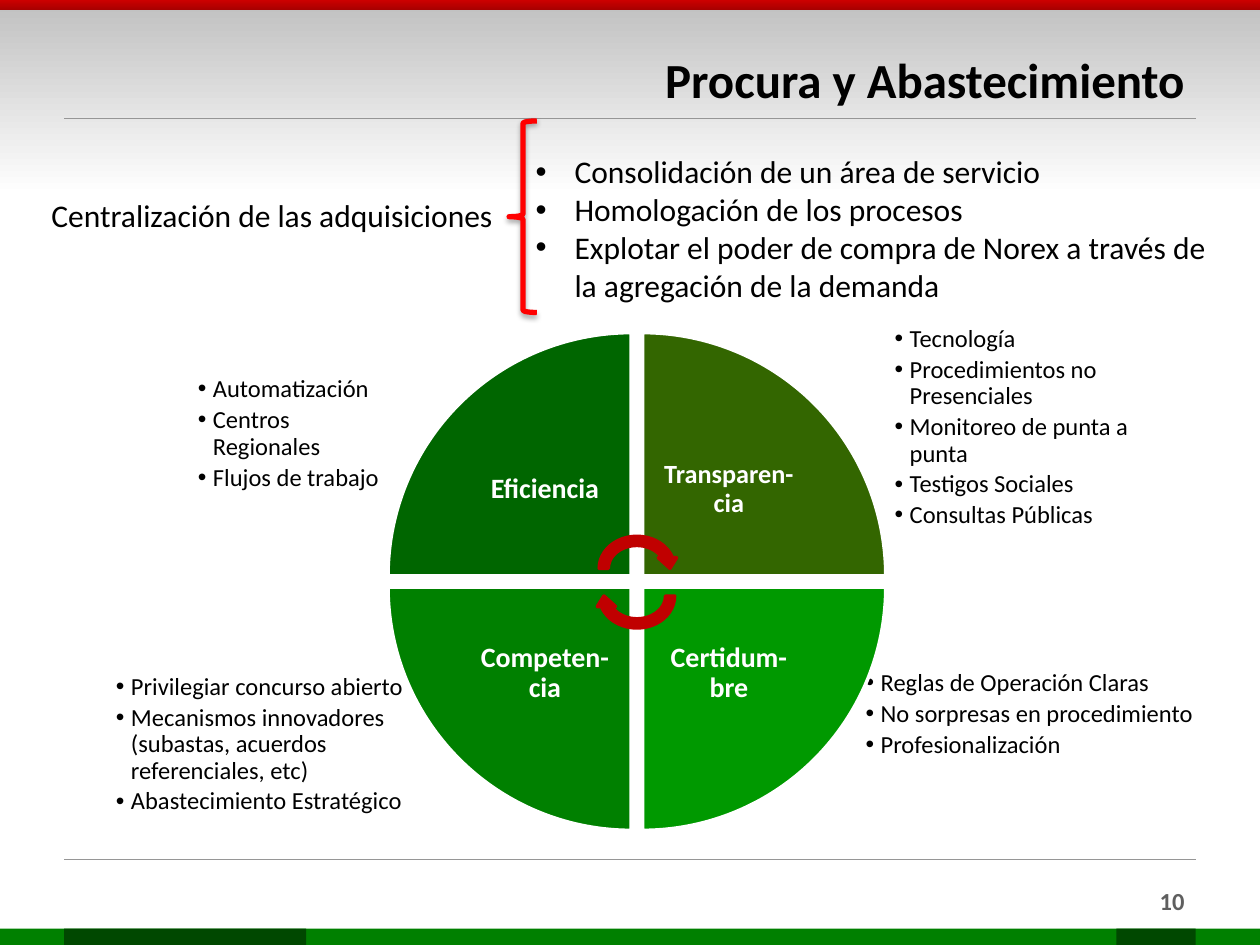
import pptx
import pptx.dml.color
import pptx.enum.shapes
import pptx.enum.text
import pptx.oxml
import pptx.oxml.ns
import pptx.util
from dataclasses import dataclass

Inches, Pt = pptx.util.Inches, pptx.util.Pt
SHAPE = pptx.enum.shapes.MSO_SHAPE
ALIGN = pptx.enum.text.PP_ALIGN
ANCHOR = pptx.enum.text.MSO_ANCHOR


@dataclass(frozen=True)
class Theme:
    """Colours, font and type sizes of the slide."""
    font: str = "Calibri"
    text: str = "000000"
    light: str = "FFFFFF"
    number: str = "5F5F5F"
    rule: str = "969696"
    header: tuple = ("C0C0C0", "FFFFFF")
    ribbon: tuple = ("CC0000", "A80000")
    footer: str = "008000"
    footer_dark: str = "004800"
    brace: str = "FF0000"
    arrow: str = "C00000"
    title_size: int = 28
    body_size: int = 18
    label_size: int = 16
    list_size: int = 14


def rgb(value):
    """Return a colour from its hex form."""
    return pptx.dml.color.RGBColor.from_string(value)


def element(xml):
    """Parse a DrawingML element."""
    return pptx.oxml.parse_xml(xml.replace(" ", f" {pptx.oxml.ns.nsdecls('a')} ", 1))


def box(at):
    """Turn left, top, width and height into lengths."""
    return [Inches(v) for v in at]


def write(sp, text, *, font, size, color, bold=False, align=ALIGN.LEFT, anchor=ANCHOR.TOP,
          inset=None, wrap=True, indent=0, spacing=1.0, after=0):
    """Fill a shape with one paragraph per line of text."""
    tf = sp.text_frame
    tf.auto_size = pptx.enum.text.MSO_AUTO_SIZE.NONE
    tf.word_wrap, tf.vertical_anchor = wrap, anchor
    if inset is not None:
        tf.margin_left = tf.margin_top = tf.margin_right = tf.margin_bottom = Inches(inset)
    for i, line in enumerate(text.split("\n")):
        p = tf.add_paragraph() if i else tf.paragraphs[0]
        if indent:
            pPr = p._p.get_or_add_pPr()
            pPr.set("marL", str(Inches(indent)))
            pPr.set("indent", str(-Inches(indent)))
            pPr.append(element('<a:buFont typeface="Arial"/>'))
            pPr.append(element('<a:buChar char="•"/>'))
        p.alignment, p.line_spacing = align, spacing
        p.space_before, p.space_after = Pt(0), Pt(after)
        r = p.add_run()
        r.text = line
        r.font.name, r.font.size, r.font.bold = font, Pt(size), bold
        r.font.color.rgb = rgb(color)


class Deck:
    """Hold the theme and the current slide."""

    def __init__(self, prs, theme):
        self.theme = theme
        self.s = prs.slides.add_slide(prs.slide_layouts[1])

    def shape(self, kind, at, fill=None, line=None, width=2, rotation=0):
        """Add a preset shape with a plain or two-colour vertical fill."""
        sp = self.s.shapes.add_shape(kind, *box(at))
        sp.shadow.inherit = False
        sp.rotation = rotation
        if fill is None:
            sp.fill.background()
        elif isinstance(fill, tuple):
            sp.fill.gradient()
            sp.fill.gradient_angle = 270
            for stop, color in zip(sp.fill.gradient_stops, fill):
                stop.color.rgb = rgb(color)
        else:
            sp.fill.solid()
            sp.fill.fore_color.rgb = rgb(fill)
        if line:
            sp.line.color.rgb, sp.line.width = rgb(line), Pt(width)
        else:
            sp.line.fill.background()
        return sp

    def rule(self, y):
        """Add a thin line across the content width."""
        cxn = self.s.shapes.add_connector(pptx.enum.shapes.MSO_CONNECTOR.STRAIGHT,
                                          Inches(0.51), Inches(y), Inches(9.49), Inches(y))
        cxn.line.color.rgb, cxn.line.width = rgb(self.theme.rule), Pt(0.75)
        cxn._element.spPr.append(element("<a:effectLst />"))

    def brace(self, at):
        """Add a left brace with a soft shadow."""
        sp = self.shape(SHAPE.LEFT_BRACE, at, line=self.theme.brace, width=3)
        effects = sp._element.spPr.find(pptx.oxml.ns.qn("a:effectLst"))
        effects.append(element(
            f'<a:outerShdw blurRad="{Pt(3.1)}" dist="{Pt(1.8)}" dir="5400000" rotWithShape="0">'
            '<a:srgbClr val="000000"><a:alpha val="35000"/></a:srgbClr></a:outerShdw>'))

    def placeholder(self, index, at, text, **style):
        """Place a template placeholder above the background and fill it."""
        sp = self.s.placeholders[index]
        sp.left, sp.top, sp.width, sp.height = box(at)
        self.s.shapes._spTree.append(sp._element)
        write(sp, text, font=self.theme.font, color=self.theme.text, **style)

    def text(self, at, text, **style):
        """Add a text box."""
        style = {"font": self.theme.font, "color": self.theme.text, **style}
        write(self.s.shapes.add_textbox(*box(at)), text, **style)

    def points(self, at, text):
        """Add a small bulleted list."""
        self.text(at, text, size=self.theme.list_size, inset=0.06, indent=0.12,
                  spacing=0.9, after=2.5)

    def wedge(self, col, row, rotation, fill, label, size):
        """Add one quarter of the circle and its label."""
        side, pitch, label_side = 1.93, 2.02, 1.37
        x, y = 3.08 + col * pitch, 2.64 + row * pitch
        gap = side - label_side
        self.shape(SHAPE.PIE_WEDGE, (x, y, side, side), fill, self.theme.light,
                   rotation=rotation)
        self.text((x + gap * (1 - col), y + gap * (1 - row), label_side, label_side), label,
                  size=size, color=self.theme.light, bold=True, align=ALIGN.CENTER,
                  anchor=ANCHOR.MIDDLE, inset=0.12, spacing=0.9)


def main():
    """Build the slide and save it."""
    prs = pptx.Presentation()
    prs.slide_width, prs.slide_height = Inches(10), Inches(7.5)
    t = Theme()
    d = Deck(prs, t)

    d.shape(SHAPE.RECTANGLE, (0, 0, 10, 1.55), t.header)
    d.shape(SHAPE.RECTANGLE, (0, 0, 10, 0.08), t.ribbon)
    for y in (0.94, 6.82):
        d.rule(y)
    for x, width, color in ((0, 10, t.footer), (0.51, 1.92, t.footer_dark),
                            (8.86, 0.63, t.footer_dark)):
        d.shape(SHAPE.RECTANGLE, (x, 7.37, width, 0.13), color)
    d.text((7.17, 6.98, 2.33, 0.32), "10", size=t.list_size, color=t.number, bold=True,
           align=ALIGN.RIGHT)

    d.placeholder(0, (4.9, 0.34, 4.6, 0.57), "Procura y Abastecimiento", size=t.title_size,
                  bold=True, align=ALIGN.RIGHT, anchor=ANCHOR.MIDDLE)
    d.text((0.31, 1.51, 3.74, 0.4), "Centralización de las adquisiciones", size=t.body_size,
           wrap=False)
    d.placeholder(1, (4.15, 1.16, 5.53, 1.31),
                  "Consolidación de un área de servicio\nHomologación de los procesos\n"
                  "Explotar el poder de compra de Norex a través de la agregación de la demanda",
                  size=t.body_size, indent=0.31)
    d.brace((4.04, 0.96, 0.22, 1.52))

    d.points((6.81, 5.26, 3, 1.47),
             "Reglas de Operación Claras\nNo sorpresas en procedimiento\nProfesionalización")
    d.points((0.86, 5.29, 2.56, 1.09),
             "Privilegiar concurso abierto\nMecanismos innovadores (subastas, acuerdos "
             "referenciales, etc)\nAbastecimiento Estratégico")
    d.points((7.04, 2.53, 2.12, 1.46),
             "Tecnología\nProcedimientos no Presenciales\nMonitoreo de punta a punta\n"
             "Testigos Sociales\nConsultas Públicas")
    d.points((1.51, 2.93, 1.62, 0.43), "Automatización\nCentros Regionales\nFlujos de trabajo")

    d.wedge(0, 0, 0, "006600", "Eficiencia", t.label_size)
    d.wedge(1, 0, 90, "336600", "Transparen-cia", t.label_size - 1)
    d.wedge(1, 1, 180, "009900", "Certidum-bre", t.label_size)
    d.wedge(0, 1, 270, "008000", "Competen-cia", t.label_size)
    for y, rotation in ((4.22, 0), (4.44, 180)):
        d.shape(SHAPE.CIRCULAR_ARROW, (4.72, y, 0.67, 0.58), t.arrow, t.arrow,
                rotation=rotation)

    prs.save("out.pptx")


if __name__ == "__main__":
    main()
